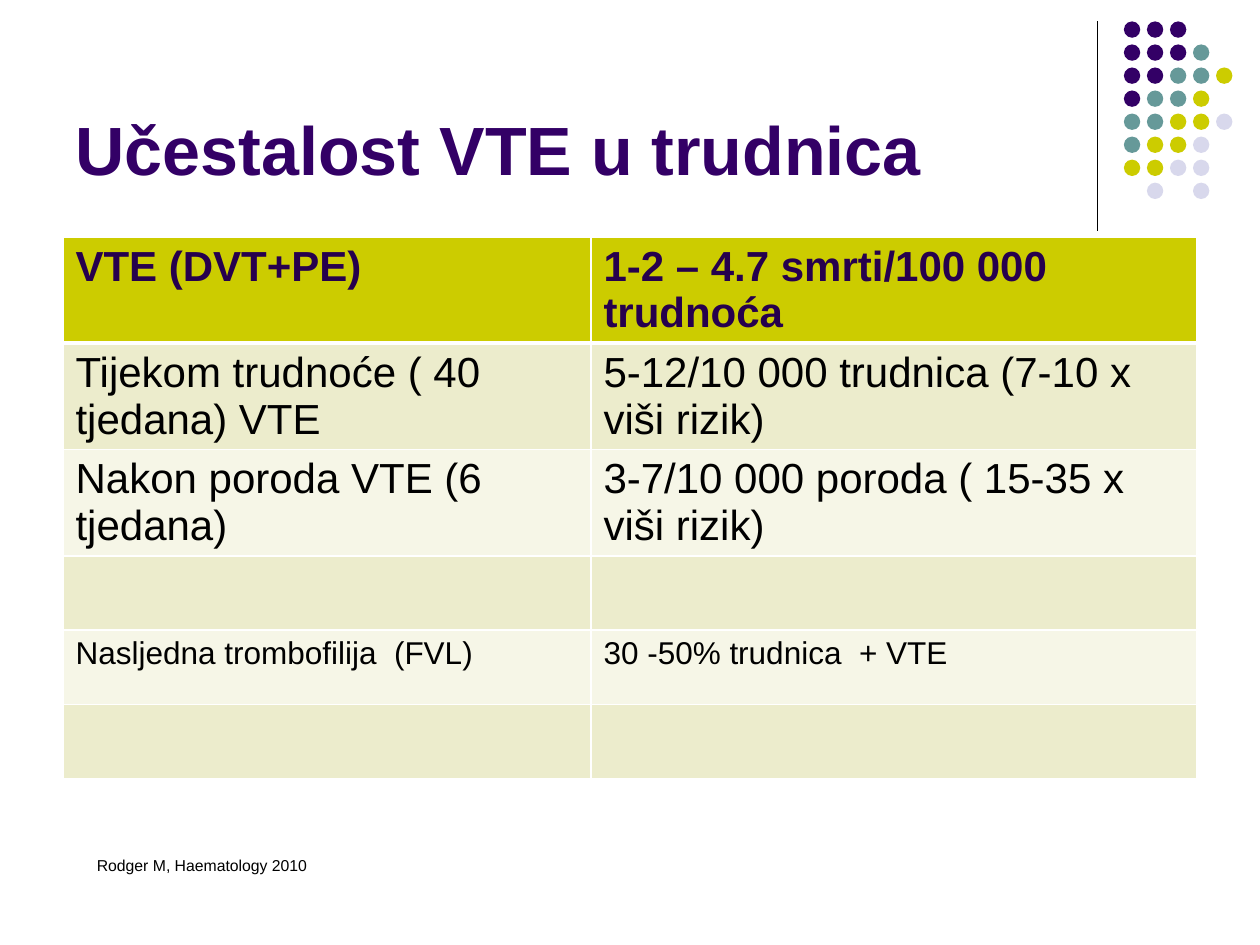
import pptx
import pptx.dml.color
import pptx.enum.shapes
import pptx.enum.text
import pptx.oxml.ns
import pptx.util
from lxml import etree

Inches = pptx.util.Inches
Pt = pptx.util.Pt
RGB = pptx.dml.color.RGBColor
qn = pptx.oxml.ns.qn

PURPLE = RGB(0x33, 0x00, 0x66)
TEAL = RGB(0x66, 0x99, 0x99)
LIME = RGB(0xCC, 0xCC, 0x00)
LILAC = RGB(0xD8, 0xD8, 0xEC)
HEADER_TEXT = RGB(0x26, 0x00, 0x4D)
BAND_DARK = RGB(0xEC, 0xEC, 0xCC)
BAND_LIGHT = RGB(0xF6, 0xF6, 0xE7)
BLACK = RGB(0x00, 0x00, 0x00)
WHITE = RGB(0xFF, 0xFF, 0xFF)

# One letter per dot; a blank leaves a gap
DOT_COLORS = {"P": PURPLE, "T": TEAL, "L": LIME, "V": LILAC}
DOT_ROWS = ["PPP", "PPPT", "PPTTL", "PTTL", "TTLLV", "TLLV", "LLVV", " V V"]

# Each row: text size, then its cells
TABLE_ROWS = [
    (24, "VTE (DVT+PE)", "1-2 – 4.7 smrti/100 000 trudnoća"),
    (24, "Tijekom trudnoće ( 40 tjedana) VTE",
     "5-12/10 000 trudnica (7-10 x viši rizik)"),
    (24, "Nakon poroda VTE (6 tjedana)",
     "3-7/10 000 poroda ( 15-35 x viši rizik)"),
    (18, "", ""),
    (18, "Nasljedna trombofilija  (FVL)", "30 -50% trudnica  + VTE"),
    (18, "", ""),
]


def write_text(tf, text, size=18, color=BLACK, bold=False, font="Arial"):
    p = tf.paragraphs[0]
    p.alignment = pptx.enum.text.PP_ALIGN.LEFT
    r = p.add_run()
    r.text = text
    r.font.name = font
    r.font.size = Pt(size)
    r.font.bold = bold
    r.font.color.rgb = color


class SlideBuilder:
    def __init__(self, slide):
        self.s = slide

    def title(self, text, left, top, width, height):
        sp = self.s.shapes.title
        sp.left, sp.top, sp.width, sp.height = left, top, width, height
        tf = sp.text_frame
        tf.auto_size = pptx.enum.text.MSO_AUTO_SIZE.NONE
        tf.vertical_anchor = pptx.enum.text.MSO_ANCHOR.BOTTOM
        write_text(tf, text, size=39, color=PURPLE, bold=True)

    def text(self, text, left, top, width, height, **fmt):
        tf = self.s.shapes.add_textbox(left, top, width, height).text_frame
        tf.word_wrap = True
        write_text(tf, text, **fmt)

    def line(self, x1, y1, x2, y2, color=BLACK, width=0.75):
        cn = self.s.shapes.add_connector(
            pptx.enum.shapes.MSO_CONNECTOR.STRAIGHT, x1, y1, x2, y2)
        cn.line.color.rgb = color
        cn.line.width = Pt(width)
        etree.SubElement(cn._element.spPr, qn("a:effectLst"))

    def dots(self, rows, left, top, pitch, size):
        group = self.s.shapes.add_group_shape()
        for i, row in enumerate(rows):
            for j, key in enumerate(row):
                if key == " ":
                    continue
                sp = group.shapes.add_shape(
                    pptx.enum.shapes.MSO_SHAPE.OVAL,
                    round(left + j * pitch), round(top + i * pitch), size, size)
                sp.shadow.inherit = False
                sp.fill.solid()
                sp.fill.fore_color.rgb = DOT_COLORS[key]
                sp.line.fill.background()

    def table(self, rows, left, top, col_widths, row_height):
        table = self.s.shapes.add_table(
            len(rows), len(col_widths), left, top,
            sum(col_widths), row_height * len(rows)).table
        for column, width in zip(table.columns, col_widths):
            column.width = width
        for i, (size, *texts) in enumerate(rows):
            header = i == 0
            fill = LIME if header else BAND_DARK if i % 2 else BAND_LIGHT
            for j, text in enumerate(texts):
                cell = table.cell(i, j)
                self.borders(cell, top=3 if i == 1 else 1, bottom=3 if header else 1)
                cell.fill.solid()
                cell.fill.fore_color.rgb = fill
                if text:
                    write_text(cell.text_frame, text, size=size, bold=header,
                               color=HEADER_TEXT if header else BLACK)

    def borders(self, cell, top, bottom):
        tc_pr = cell._tc.get_or_add_tcPr()
        for tag, width in (("lnL", 1), ("lnR", 1), ("lnT", top), ("lnB", bottom)):
            ln = etree.SubElement(tc_pr, qn("a:" + tag), w=str(Pt(width)))
            fill = etree.SubElement(ln, qn("a:solidFill"))
            etree.SubElement(fill, qn("a:srgbClr"), val=str(WHITE))


def main():
    prs = pptx.Presentation()
    prs.slide_width, prs.slide_height = Inches(10), Inches(7.5)
    b = SlideBuilder(prs.slides.add_slide(prs.slide_layouts[5]))

    # Corner decoration
    b.line(Inches(8.71), Inches(0.17), Inches(8.71), Inches(1.83))
    b.dots(DOT_ROWS, Inches(8.92), Inches(0.17),
           pitch=Inches(1.28) / 7, size=Inches(0.13))

    # Title, table and citation
    b.title("Učestalost VTE u trudnica",
            Inches(0.5), Inches(0.13), Inches(8.25), Inches(1.42))
    b.table(TABLE_ROWS, Inches(0.5), Inches(1.88),
            col_widths=[Inches(4.19), Inches(4.81)], row_height=Inches(0.59))
    b.text("Rodger M, Haematology 2010",
           Inches(0.67), Inches(6.74), Inches(4.72), Inches(0.25), size=9)

    prs.save("out.pptx")


if __name__ == "__main__":
    main()
